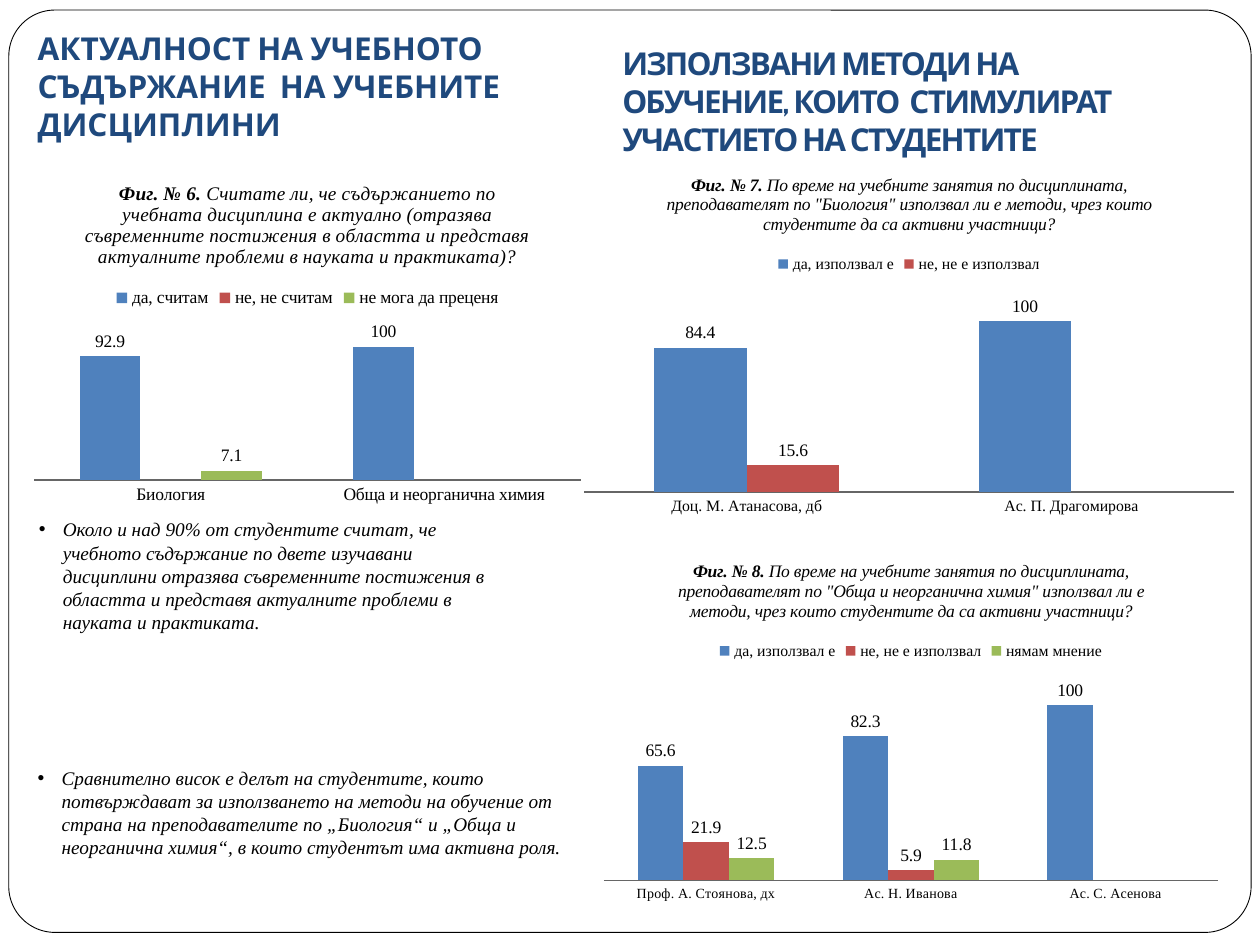
from dataclasses import dataclass
from typing import Any

from lxml.etree import SubElement
from pptx import Presentation
from pptx.chart.data import CategoryChartData
from pptx.dml.color import RGBColor
from pptx.enum.chart import XL_CHART_TYPE as ChartType, XL_LABEL_POSITION as LabelPos
from pptx.enum.chart import XL_LEGEND_POSITION as LegendPos, XL_TICK_LABEL_POSITION as TickPos
from pptx.enum.chart import XL_TICK_MARK as TickMark
from pptx.enum.shapes import MSO_SHAPE as Shape
from pptx.enum.text import MSO_ANCHOR as Anchor
from pptx.oxml import parse_xml
from pptx.oxml.ns import nsdecls, qn
from pptx.util import Inches, Pt

COLORS = {"paper": "FFFFFF", "ink": "000000", "title": "1F497D", "axis": "666666"}
SERIES_COLORS = ["4F81BD", "C0504D", "9BBB59"]
SERIF, SANS = "Times New Roman", "Cabin"


def apply(target, values):
    """Set every attribute of target that is named in values."""
    for name, value in values.items():
        setattr(target, name, value)


@dataclass
class SlideWriter:
    """Hold the style and the current page, and draw its elements."""

    page: Any

    def style(self, font, color="ink", **values):
        """Give a font its colour and the other format values."""
        apply(font, values)
        font.color.rgb = RGBColor.from_string(COLORS[color])

    def frame(self, place, radius):
        """Draw the rounded outline of the page."""
        shape = self.page.shapes.add_shape(Shape.ROUNDED_RECTANGLE, *map(Inches, place))
        shape.shadow.inherit = False
        shape.adjustments[0] = radius
        shape.fill.solid()
        shape.fill.fore_color.rgb = RGBColor.from_string(COLORS["paper"])
        shape.line.color.rgb = RGBColor.from_string(COLORS["ink"])
        shape.line.width = Pt(0.5)

    def text(self, place, words, **values):
        """Add a wrapped text box with one paragraph and return the box."""
        box = self.page.shapes.add_textbox(*map(Inches, place))
        box.text_frame.word_wrap = True
        span = box.text_frame.paragraphs[0].add_run()
        span.text = words
        self.style(span.font, **values)
        return box

    def heading(self, place, words, anchor, bottom=0.05, spacing=0):
        """Add a section heading."""
        box = self.text(place, words, color="title", name=SANS, size=Pt(18), bold=True)
        apply(box.text_frame, {"vertical_anchor": anchor, "margin_bottom": Inches(bottom)})
        box.text_frame.paragraphs[0].runs[0].font._element.set("spc", str(spacing))

    def bullet(self, place, words):
        """Add a finding with a bullet and a hanging indent."""
        box = self.text(place, words, name=SERIF, size=Pt(11), italic=True)
        para = box.text_frame.paragraphs[0]
        para.space_after = Pt(10)
        props = para._p.get_or_add_pPr()
        props.set("marL", str(Inches(0.19)))
        props.set("indent", str(-Inches(0.19)))
        SubElement(props, qn("a:buFont")).set("typeface", "Arial")
        SubElement(props, qn("a:buChar")).set("char", "•")

    def chart(self, place, number, question, cats, series, plot, title=10, legend=9, axis=9):
        """Add a clustered column chart with its question as the title."""
        data = CategoryChartData()
        data.categories = cats
        for name, values in series.items():
            data.add_series(name, values)
        chart = self.page.shapes.add_chart(ChartType.COLUMN_CLUSTERED, *map(Inches, place), data).chart
        self.style(chart.font, name=SERIF, size=Pt(10))
        para = chart.chart_title.text_frame.paragraphs[0]
        for words, bold in ((f"Фиг. № {number}. ", True), (question, False)):
            span = para.add_run()
            span.text = words
            self.style(span.font, name=SERIF, size=Pt(title), bold=bold, italic=True)
        chart.chart_title.include_in_layout = False
        chart.has_legend = True
        apply(chart.legend, {"position": LegendPos.TOP, "include_in_layout": False})
        self.style(chart.legend.font, name=SERIF, size=Pt(legend))
        apply(chart.value_axis, {"visible": False, "has_major_gridlines": False,
                                 "minimum_scale": 0, "maximum_scale": 120})
        self.axis_style(chart.category_axis, axis)
        columns = chart.plots[0]
        apply(columns, {"gap_width": 150, "overlap": 0, "vary_by_categories": False, "has_data_labels": True})
        apply(columns.data_labels, {"show_value": True, "position": LabelPos.OUTSIDE_END})
        self.style(columns.data_labels.font, name=SERIF, size=Pt(10))
        for bars, color in zip(columns.series, SERIES_COLORS):
            bars.format.fill.solid()
            bars.format.fill.fore_color.rgb = RGBColor.from_string(color)
        self.place_plot(chart, *plot)

    def axis_style(self, axis, size):
        """Style the line, the marks and the labels of a category axis."""
        apply(axis, {"major_tick_mark": TickMark.NONE, "minor_tick_mark": TickMark.NONE,
                     "tick_label_position": TickPos.NEXT_TO_AXIS})
        self.style(axis.tick_labels.font, name=SERIF, size=Pt(size))
        axis.tick_labels.offset = 0
        axis.format.line.color.rgb = RGBColor.from_string(COLORS["axis"])
        axis.format.line.width = Pt(0.75)

    def place_plot(self, chart, top, height):
        """Fix the inner plot area as fractions of the chart."""
        area = chart._chartSpace.chart.plotArea
        for old in area.findall(qn("c:layout")):
            area.remove(old)
        places = {"x": 0.02, "y": top, "w": 0.96, "h": height}
        modes = '<c:layoutTarget val="inner"/><c:xMode val="edge"/><c:yMode val="edge"/>'
        sizes = "".join(f'<c:{key} val="{value}"/>' for key, value in places.items())
        area.insert(0, parse_xml(f'<c:layout {nsdecls("c")}><c:manualLayout>{modes}{sizes}'
                                 "</c:manualLayout></c:layout>"))


def main():
    """Build the survey slide and save it."""
    deck = Presentation()
    apply(deck, {"slide_width": Inches(10), "slide_height": Inches(7.5)})
    writer = SlideWriter(deck.slides.add_slide(deck.slide_layouts[6]))
    writer.frame((0.07, 0.08, 9.86, 7.32), 0.05)
    writer.heading((0.2, 0.21, 4.25, 1.02), "АКТУАЛНОСТ НА УЧЕБНОТО СЪДЪРЖАНИЕ  НА УЧЕБНИТЕ ДИСЦИПЛИНИ",
                   Anchor.BOTTOM, bottom=0.1)
    writer.heading((4.84, 0.29, 4.25, 1.02),
                   "ИЗПОЛЗВАНИ МЕТОДИ НА ОБУЧЕНИЕ, КОИТО  СТИМУЛИРАТ УЧАСТИЕТО НА СТУДЕНТИТЕ",
                   Anchor.MIDDLE, spacing=-100)
    writer.bullet((0.21, 4.06, 3.94, 1.18),
                  "Около и над 90% от студентите считат, че учебното съдържание по двете изучавани дисциплини "
                  "отразява съвременните постижения в областта и представя актуалните проблеми в науката и "
                  "практиката.")
    writer.bullet((0.2, 6.03, 4.49, 1.1),
                  "Сравнително висок е делът на студентите, които потвърждават за използването на методи на "
                  "обучение от страна на преподавателите по „Биология“ и „Обща и неорганична химия“, в които "
                  "студентът има активна роля.")
    writer.chart((0.18, 1.3, 4.52, 2.76), 6,
                 "Считате ли, че съдържанието по учебната дисциплина е актуално (отразява съвременните "
                 "постижения в областта и представя актуалните проблеми в науката и практиката)?",
                 ["Биология", "Обща и неорганична химия"],
                 {"да, считам": (92.9, 100), "не, не считам": (None, None), "не мога да преценя": (7.1, None)},
                 (0.45, 0.46), title=11, legend=10, axis=10)
    methods = ("По време на учебните занятия по дисциплината, преподавателят по \"{}\" използвал ли е "
               "методи, чрез които студентите да са активни участници?")
    used, unused = "да, използвал е", "не, не е използвал"
    writer.chart((4.69, 4.3, 5.08, 2.92), 8, methods.format("Обща и неорганична химия"),
                 ["Проф. А. Стоянова, дх", "Ас. Н. Иванова", "Ас. С. Асенова"],
                 {used: (65.6, 82.3, 100), unused: (21.9, 5.9, None), "нямам мнение": (12.5, 11.8, None)},
                 (0.35, 0.57), axis=8)
    writer.chart((4.53, 1.23, 5.37, 2.91), 7, methods.format("Биология"),
                 ["Доц. М. Атанасова, дб", "Ас. П. Драгомирова"],
                 {used: (84.4, 100), unused: (15.6, None)}, (0.36, 0.56))
    deck.save("out.pptx")


if __name__ == "__main__":
    main()
